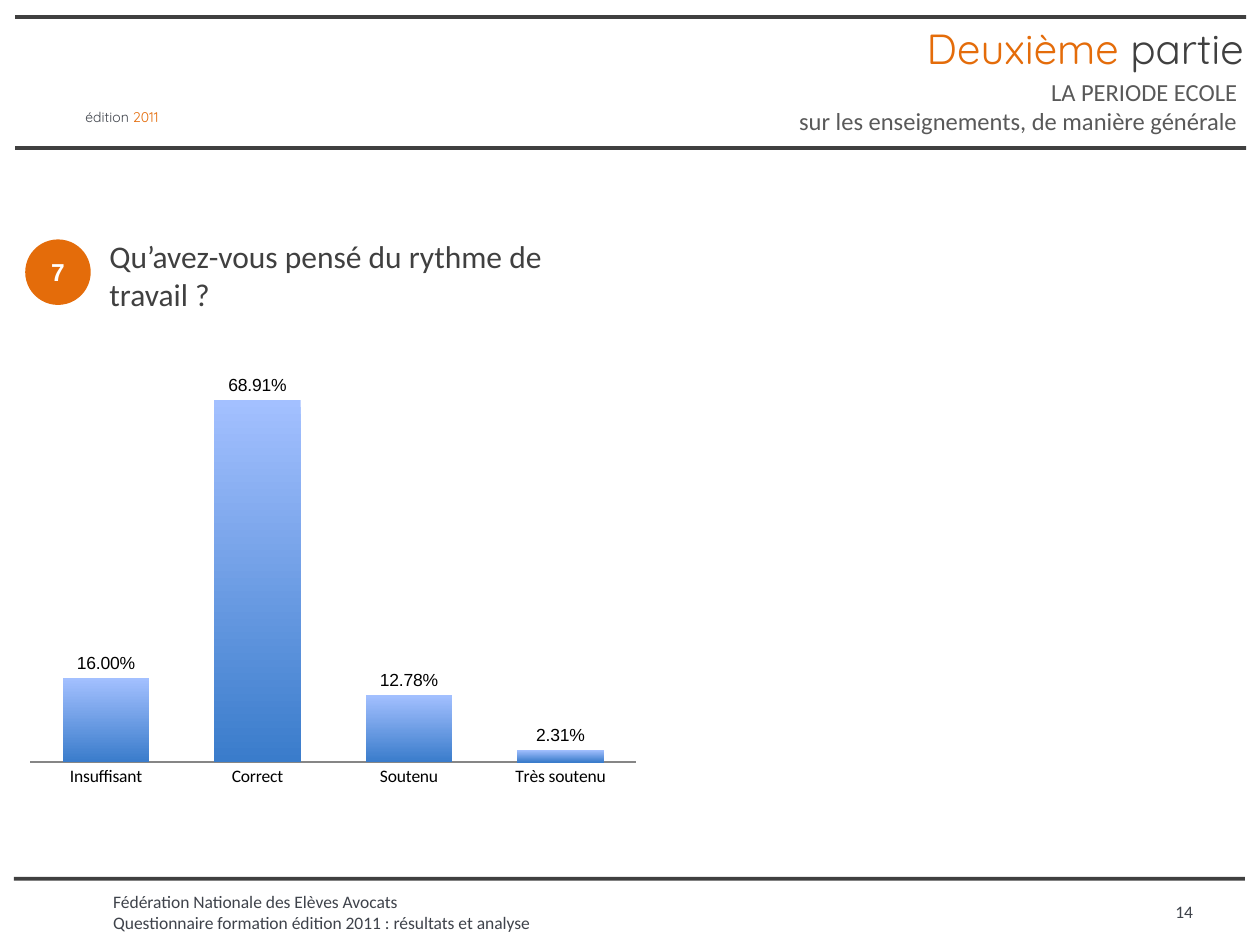
from lxml import etree
from pptx import Presentation
from pptx.chart.data import CategoryChartData
from pptx.dml.color import RGBColor
from pptx.enum.chart import XL_CHART_TYPE as ChartType, XL_LABEL_POSITION as LabelPosition
from pptx.enum.chart import XL_TICK_MARK as TickMark
from pptx.enum.shapes import MSO_SHAPE as Shape
from pptx.enum.text import MSO_ANCHOR as Anchor, MSO_AUTO_SIZE as AutoSize, PP_ALIGN as Align
from pptx.oxml import parse_xml
from pptx.oxml.ns import nsdecls, qn
from pptx.util import Inches, Pt

DARK, SLATE, GREY, ORANGE = "404040", "3F434B", "595959", "E46C0A"


def color(value):
    return RGBColor.from_string(value)


def set_font(font, size, name, value, bold=False):
    font.size, font.name, font.bold = Pt(size), name, bold
    font.color.rgb = color(value)


def write_lines(shape, lines, size, name, value, align=Align.LEFT, wrap=True):
    """Fill a shape with lines; a line is a list of (text, colour) or a string."""
    frame = shape.text_frame
    frame.word_wrap = wrap
    frame.auto_size = AutoSize.NONE
    frame.vertical_anchor = Anchor.TOP
    for index, line in enumerate(lines):
        para = frame.add_paragraph() if index else frame.paragraphs[0]
        para.alignment = align
        set_font(para.font, size, name, value)
        for text, span_color in [(line, None)] if isinstance(line, str) else line:
            span = para.add_run()
            span.text = text
            if span_color:
                span.font.color.rgb = color(span_color)


def add_text(page, box, *args, **options):
    write_lines(page.shapes.add_textbox(*map(Inches, box)), *args, **options)


def add_plain_shape(page, kind, box, fill):
    shape = page.shapes.add_shape(kind, *map(Inches, box))
    shape.shadow.inherit = False
    shape.fill.solid()
    shape.fill.fore_color.rgb = color(fill)
    shape.line.fill.background()
    return shape


def add_rule(page, left, top):
    add_plain_shape(page, Shape.RECTANGLE, (left, top, 9.77, 0.03), DARK)


def add_header(page, left, top):
    for offset in (0, 1.04):
        add_rule(page, left, top + offset)
    add_text(page, (left + 0.46, top + 0.69, 0.86, 0.24),
             [[("édition ", None), ("2011", ORANGE)]], 8, "Quicksand", SLATE, wrap=False)
    # Section title and subtitle
    title = page.shapes.title
    title.left, title.top, title.width, title.height = map(
        Inches, (left + 1.87, top + 0.01, 7.98, 0.5))
    write_lines(title, [[("Deuxième ", ORANGE), ("partie", None)]],
                24, "Quicksand", DARK, Align.RIGHT)
    add_text(page, (left + 6.09, top + 0.44, 3.71, 0.57),
             ["LA PERIODE ECOLE", "sur les enseignements, de manière générale"],
             14, "Calibri", GREY, align=Align.RIGHT, wrap=False)


def add_footer(page, left, top):
    add_rule(page, left, top)
    add_text(page, (left + 0.69, top + 0.06, 6.48, 0.44),
             ["Fédération Nationale des Elèves Avocats",
              "Questionnaire formation édition 2011 : résultats et analyse"],
             10, "Calibri", SLATE)
    add_text(page, (left + 9.12, top + 0.14, 0.64, 0.27), ["14"], 10, "Calibri", SLATE)


def add_question(page, left, top, number, question):
    badge = add_plain_shape(page, Shape.OVAL, (left, top, 0.52, 0.52), ORANGE)
    frame = badge.text_frame
    frame.margin_left = frame.margin_right = Inches(0.04)
    frame.vertical_anchor = Anchor.MIDDLE
    para = frame.paragraphs[0]
    para.text, para.alignment = number, Align.CENTER
    set_font(para.font, 14, "Arial", "FFFFFF", bold=True)
    add_text(page, (left + 0.57, top - 0.07, 4.31, 0.71), [question], 18, "Calibri", DARK)


def set_plot_area(chart, x, y, width, height):
    """Fix the inner plot area, as fractions of the chart, and clear the background."""
    space = chart.element
    plot_area = space.find(".//" + qn("c:plotArea"))
    old_layout = plot_area.find(qn("c:layout"))
    if old_layout is not None:
        plot_area.remove(old_layout)
    layout = etree.Element(qn("c:layout"))
    manual = etree.SubElement(layout, qn("c:manualLayout"))
    settings = [("layoutTarget", "inner"), ("xMode", "edge"), ("yMode", "edge"),
                ("x", x), ("y", y), ("w", width), ("h", height)]
    for tag, value in settings:
        etree.SubElement(manual, qn("c:" + tag)).set("val", str(value))
    plot_area.insert(0, layout)
    space.find(qn("c:chart")).addnext(parse_xml(
        f'<c:spPr {nsdecls("c", "a")}><a:noFill/><a:ln><a:noFill/></a:ln></c:spPr>'))


def add_answers_chart(page, box, answers):
    data = CategoryChartData(number_format="0.00%")
    data.categories = list(answers)
    data.add_series("Series 1", list(answers.values()))
    chart = page.shapes.add_chart(
        ChartType.COLUMN_CLUSTERED, *map(Inches, box), data).chart
    chart.has_legend = chart.has_title = False
    set_font(chart.font, 10, "Arial", "000000")
    set_plot_area(chart, 0.02, 0.02, 0.96, 0.91)
    # Axes
    values = chart.value_axis
    values.minimum_scale, values.maximum_scale = 0, 1
    values.has_major_gridlines = False
    values.visible = False
    categories = chart.category_axis
    categories.major_tick_mark = categories.minor_tick_mark = TickMark.NONE
    categories.format.line.color.rgb = color("868686")
    set_font(categories.tick_labels.font, 10, "Calibri", "000000")
    # Columns and their labels
    plot = chart.plots[0]
    plot.gap_width = 75
    plot.vary_by_categories = False
    fill = plot.series[0].format.fill
    fill.gradient()
    fill.gradient_angle = 270
    for stop, value in zip(fill.gradient_stops, ("A3C0FF", "3A7CCB")):
        stop.color.rgb = color(value)
    plot.has_data_labels = True
    labels = plot.data_labels
    labels.show_value = True
    labels.number_format, labels.number_format_is_linked = "0.00%", False
    labels.position = LabelPosition.OUTSIDE_END
    set_font(labels.font, 10, "Arial", "000000")


def main():
    deck = Presentation()
    deck.slide_width, deck.slide_height = Inches(10), Inches(7.5)
    page = deck.slides.add_slide(deck.slide_layouts[5])
    add_footer(page, 0.11, 6.96)
    add_header(page, 0.12, 0.12)
    add_question(page, 0.2, 1.9, "7", "Qu’avez-vous pensé du rythme de travail ?")
    add_answers_chart(page, (0.14, 1.79, 5.01, 4.58), {
        "Insuffisant": 0.16, "Correct": 0.6891, "Soutenu": 0.1278, "Très soutenu": 0.0231})
    deck.save("out.pptx")


if __name__ == "__main__":
    main()
